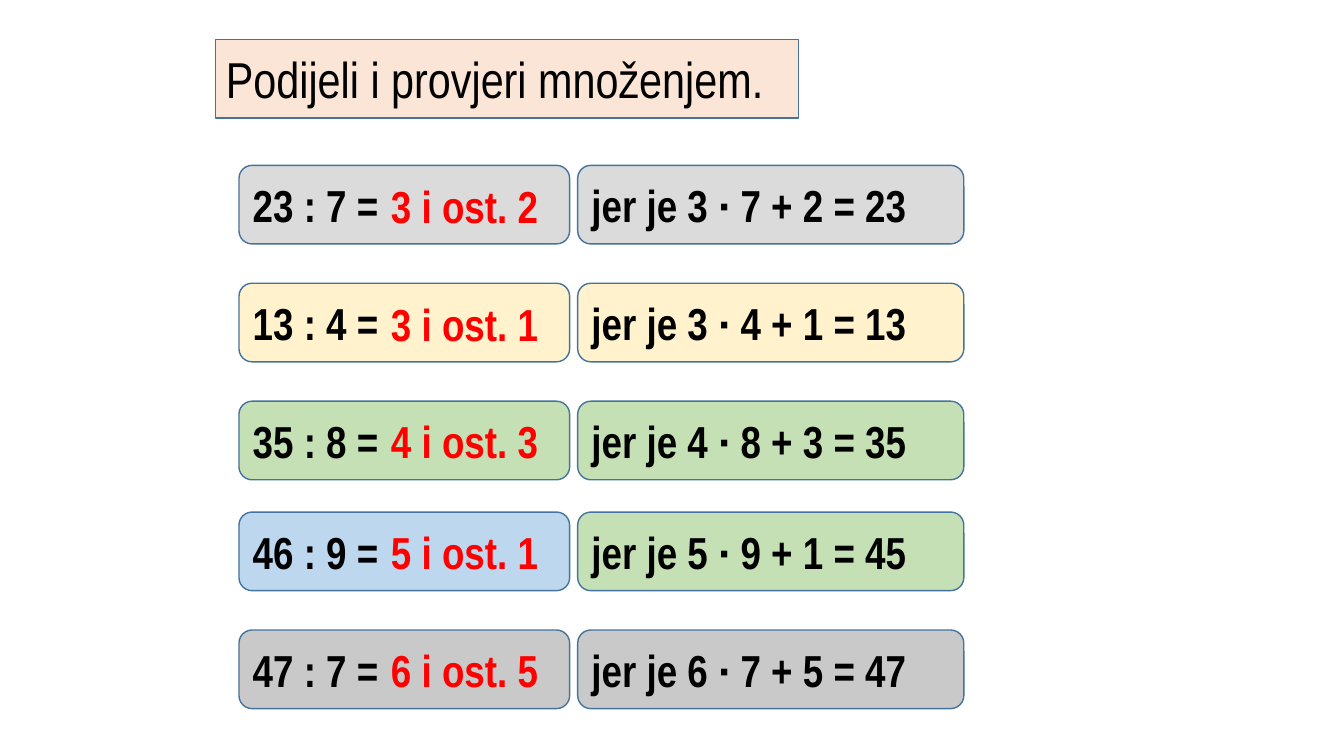
import dataclasses

import pptx
import pptx.dml.color
import pptx.enum.shapes
import pptx.enum.text
import pptx.oxml
import pptx.oxml.ns
import pptx.util

Inches = pptx.util.Inches
ANCHOR = pptx.enum.text.MSO_ANCHOR


@dataclasses.dataclass(frozen=True)
class Theme:
    font: str = "Arial Narrow"
    title_size: int = 36
    body_size: int = 32
    text: str = "000000"
    answer: str = "FF0000"
    outline: str = "43739E"
    title_fill: str = "FBE5D6"
    light_grey: str = "DBDBDB"
    yellow: str = "FFF2CC"
    green: str = "C5E0B4"
    blue: str = "BDD7EE"
    grey: str = "C9C9C9"


THEME = Theme()
SLIDE_W, SLIDE_H = 13.33, 7.5
PANEL_H = 0.78

# Columns of an exercise row: left edge and width
TASK_COL = (2.37, 3.28)
ANSWER_COL = (3.78, 1.67)
CHECK_COL = (5.73, 3.83)

# The rows form two evenly spaced groups
ROW_PITCH = 1.17
ROW_TOPS = [1.64 + ROW_PITCH * i for i in range(3)] + [5.08 + ROW_PITCH * i for i in range(2)]

# Task, answer, check, task fill, check fill
EXERCISES = [
    ("23 : 7 =", "3 i ost. 2", "jer je 3 · 7 + 2 = 23", THEME.light_grey, THEME.light_grey),
    ("13 : 4 =", "3 i ost. 1", "jer je 3 · 4 + 1 = 13", THEME.yellow, THEME.yellow),
    ("35 : 8 =", "4 i ost. 3", "jer je 4 · 8 + 3 = 35", THEME.green, THEME.green),
    ("46 : 9 =", "5 i ost. 1", "jer je 5 · 9 + 1 = 45", THEME.blue, THEME.green),
    ("47 : 7 =", "6 i ost. 5", "jer je 6 · 7 + 5 = 47", THEME.grey, THEME.grey),
]


def rgb(value):
    return pptx.dml.color.RGBColor.from_string(value)


def write(sp, text, size, color, bold, anchor):
    tf = sp.text_frame
    tf.text = text
    tf.vertical_anchor = anchor
    p = tf.paragraphs[0]
    p.alignment = pptx.enum.text.PP_ALIGN.LEFT
    font = p.runs[0].font
    font.name, font.size, font.bold = THEME.font, pptx.util.Pt(size), bold
    font.color.rgb = rgb(color)


def paint(sp, fill):
    sp.fill.solid()
    sp.fill.fore_color.rgb = rgb(fill)
    sp.line.color.rgb = rgb(THEME.outline)
    sp.line.width = pptx.util.Pt(1)


def add_title(s, box, text):
    sp = s.shapes.title
    sp.left, sp.top, sp.width, sp.height = map(Inches, box)
    # Rounded outline for the placeholder
    sp._element.spPr.append(pptx.oxml.parse_xml(
        f'<a:prstGeom {pptx.oxml.ns.nsdecls("a")} prst="roundRect"><a:avLst/></a:prstGeom>'))
    paint(sp, THEME.title_fill)
    write(sp, text, THEME.title_size, THEME.text, False, ANCHOR.MIDDLE)
    sp.text_frame.word_wrap = True
    sp.text_frame.auto_size = pptx.enum.text.MSO_AUTO_SIZE.NONE


def add_panel(s, box, text, fill):
    sp = s.shapes.add_shape(pptx.enum.shapes.MSO_SHAPE.ROUNDED_RECTANGLE, *map(Inches, box))
    sp.shadow.inherit = False
    paint(sp, fill)
    write(sp, text, THEME.body_size, THEME.text, True, ANCHOR.MIDDLE)


def add_answer(s, box, text):
    sp = s.shapes.add_textbox(*map(Inches, box))
    write(sp, text, THEME.body_size, THEME.answer, True, ANCHOR.TOP)
    sp.text_frame.word_wrap = False
    sp.text_frame.auto_size = pptx.enum.text.MSO_AUTO_SIZE.SHAPE_TO_FIT_TEXT


def add_exercise(s, top, task, answer, check, task_fill, check_fill):
    add_panel(s, (TASK_COL[0], top, TASK_COL[1], PANEL_H), task, task_fill)
    add_answer(s, (ANSWER_COL[0], top + 0.08, ANSWER_COL[1], 0.64), answer)
    add_panel(s, (CHECK_COL[0], top, CHECK_COL[1], PANEL_H), check, check_fill)


def main():
    prs = pptx.Presentation()
    prs.slide_width, prs.slide_height = Inches(SLIDE_W), Inches(SLIDE_H)
    s = prs.slides.add_slide(prs.slide_layouts.get_by_name("Title Only"))
    add_title(s, (2.14, 0.39, 5.78, PANEL_H), "Podijeli i provjeri množenjem.")
    for top, exercise in zip(ROW_TOPS, EXERCISES):
        add_exercise(s, top, *exercise)
    prs.save("out.pptx")


if __name__ == "__main__":
    main()
